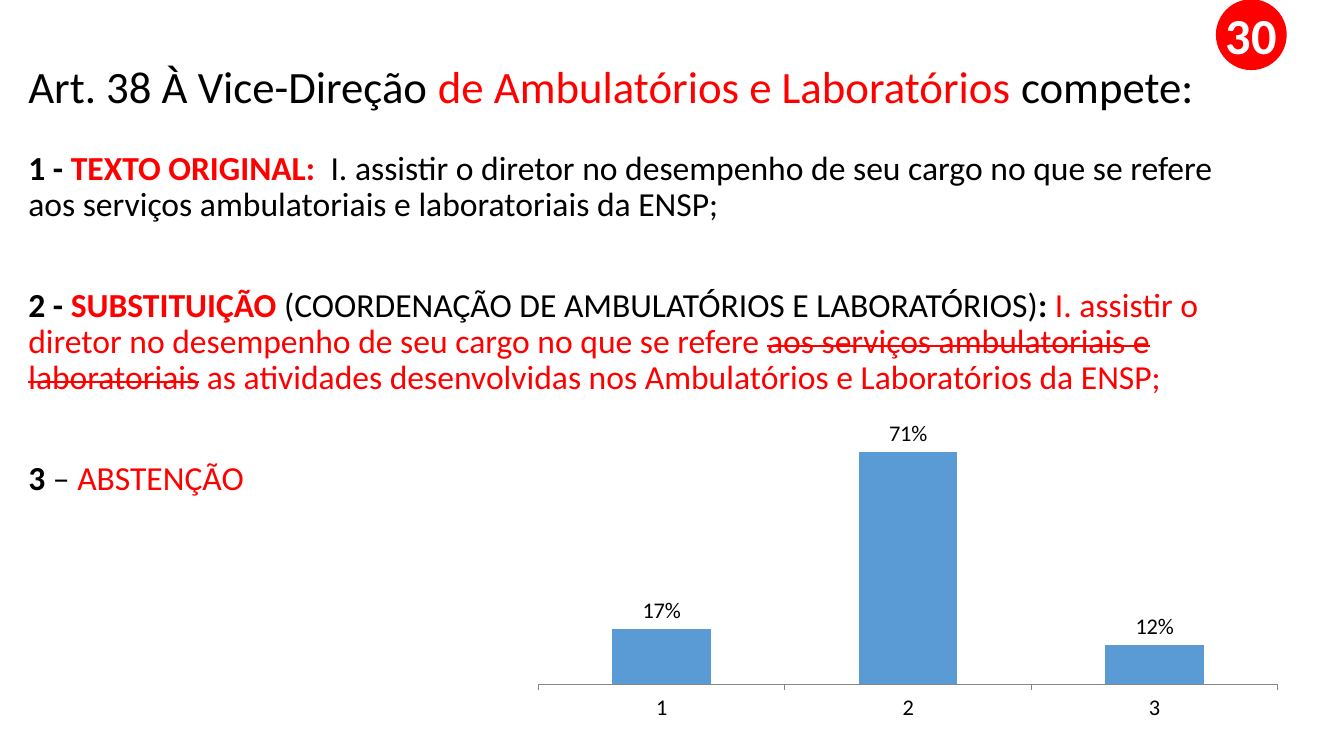
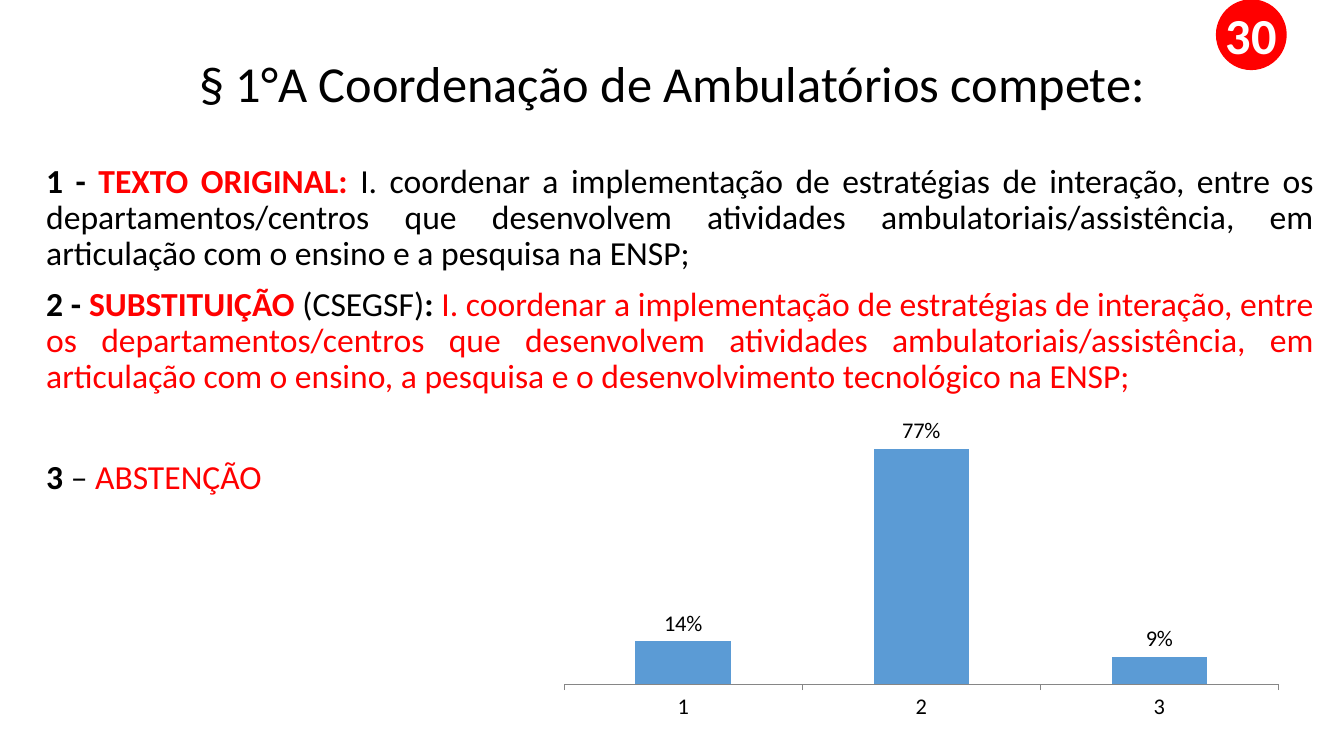
from dataclasses import dataclass

import lxml.etree
import pptx
import pptx.chart.data
import pptx.dml.color
import pptx.enum.chart
import pptx.enum.shapes
import pptx.enum.text
import pptx.oxml.ns
import pptx.util

Cm = pptx.util.Cm
Pt = pptx.util.Pt
ALIGN = pptx.enum.text.PP_ALIGN
ANCHOR = pptx.enum.text.MSO_ANCHOR


@dataclass(frozen=True)
class Theme:
    font: str = "Calibri"
    text: str = "000000"
    accent: str = "FF0000"
    on_accent: str = "FFFFFF"
    bars: str = "5B9BD5"
    axis: str = "868686"
    badge_size: int = 36
    body_size: int = 24
    chart_size: int = 16
    line_spacing: float = 0.9
    gap: int = 10
    wide_gap: int = 46


THEME = Theme()


def rgb(color):
    return pptx.dml.color.RGBColor.from_string(color)


def style_font(font, size, color, bold=False):
    font.name = THEME.font
    font.size = Pt(size)
    font.bold = bold
    font.color.rgb = rgb(color)


def add_text(paragraph, text, size=THEME.body_size, color=THEME.text,
             bold=False, strike=False):
    run = paragraph.add_run()
    run.text = text
    style_font(run.font, size, color, bold)
    if strike:
        run._r.get_or_add_rPr().set("strike", "sngStrike")


def place(placeholder, box, anchor):
    """Move a placeholder to box (left, top, width, height in cm)."""
    placeholder.left, placeholder.top, placeholder.width, placeholder.height = map(Cm, box)
    frame = placeholder.text_frame
    frame.word_wrap = True
    frame.auto_size = pptx.enum.text.MSO_AUTO_SIZE.NONE
    frame.vertical_anchor = anchor
    return frame


def fill_title(slide, box, parts, size, align):
    paragraph = place(slide.shapes.title, box, ANCHOR.MIDDLE).paragraphs[0]
    paragraph.alignment = align
    paragraph.line_spacing = THEME.line_spacing
    for text, color in parts:
        add_text(paragraph, text, size=size, color=color)


def fill_options(slide, box, options, align):
    """Write the voting options; each is (space before, [(text, format), ...])."""
    frame = place(slide.placeholders[1], box, ANCHOR.TOP)
    for index, (space, parts) in enumerate(options):
        paragraph = frame.add_paragraph() if index else frame.paragraphs[0]
        properties = paragraph._p.get_or_add_pPr()
        properties.set("marL", "0")
        properties.set("indent", "0")
        lxml.etree.SubElement(properties, pptx.oxml.ns.qn("a:buNone"))
        paragraph.alignment = align
        paragraph.line_spacing = THEME.line_spacing
        paragraph.space_before = Pt(space)
        for text, text_format in parts:
            add_text(paragraph, text, **text_format)


def add_votes_chart(slide, box, votes, maximum):
    data = pptx.chart.data.CategoryChartData(number_format="0%")
    data.categories = [str(number + 1) for number in range(len(votes))]
    data.add_series("Series 1", votes)
    kind = pptx.enum.chart.XL_CHART_TYPE.COLUMN_CLUSTERED
    chart = slide.shapes.add_chart(kind, *map(Cm, box), data).chart
    chart.has_title = False
    chart.has_legend = False
    style_font(chart.font, THEME.chart_size, THEME.text)

    shares = chart.value_axis
    shares.minimum_scale = 0
    shares.maximum_scale = maximum
    shares.has_major_gridlines = False
    shares.visible = False
    options = chart.category_axis
    options.major_tick_mark = pptx.enum.chart.XL_TICK_MARK.OUTSIDE
    options.format.line.color.rgb = rgb(THEME.axis)

    plot = chart.plots[0]
    plot.gap_width = 150
    plot.vary_by_categories = False
    fill = plot.series[0].format.fill
    fill.solid()
    fill.fore_color.rgb = rgb(THEME.bars)
    plot.has_data_labels = True
    labels = plot.data_labels
    labels.show_value = True
    labels.number_format = "0%"
    labels.number_format_is_linked = False
    labels.position = pptx.enum.chart.XL_LABEL_POSITION.OUTSIDE_END
    style_font(labels.font, THEME.chart_size, THEME.text)


def add_badge(slide, text):
    diameter = Cm(1.75)
    badge = slide.shapes.add_shape(pptx.enum.shapes.MSO_SHAPE.OVAL,
                                   Cm(30.66), 0, diameter, diameter)
    badge.shadow.inherit = False
    badge.fill.solid()
    badge.fill.fore_color.rgb = rgb(THEME.accent)
    badge.line.color.rgb = rgb(THEME.accent)
    badge.line.width = Pt(1)
    frame = badge.text_frame
    frame.margin_left = frame.margin_right = frame.margin_top = frame.margin_bottom = 0
    frame.word_wrap = False
    frame.vertical_anchor = ANCHOR.MIDDLE
    frame.paragraphs[0].alignment = ALIGN.CENTER
    add_text(frame.paragraphs[0], text, size=THEME.badge_size,
             color=THEME.on_accent, bold=True)


def add_vote_slide(deck, title, options, chart):
    slide = deck.slides.add_slide(deck.slide_layouts[1])
    fill_title(slide, **title)
    fill_options(slide, **options)
    add_votes_chart(slide, **chart)
    add_badge(slide, "30")


def main():
    deck = pptx.Presentation()
    deck.slide_width, deck.slide_height = Cm(33.87), Cm(19.05)

    plain = {}
    strong = {"bold": True}
    red = {"color": THEME.accent}
    heading = {**strong, **red}
    original = [("1 - ", strong), ("TEXTO ORIGINAL: ", heading)]
    replacement = [("2 - ", strong), ("SUBSTITUIÇÃO ", heading)]
    abstention = (THEME.wide_gap, [("3", strong), (" – ", plain), ("ABSTENÇÃO", red)])

    add_vote_slide(
        deck,
        title={
            "box": (0.46, 1.02, 31.06, 2.44), "size": 32, "align": ALIGN.LEFT,
            "parts": [("Art. 38 À Vice-Direção ", THEME.text),
                      ("de Ambulatórios e Laboratórios ", THEME.accent),
                      ("compete:", THEME.text)],
        },
        options={
            "box": (0.46, 3.68, 31.06, 13.49), "align": ALIGN.LEFT,
            "options": [
                (0, original + [
                    (" I. assistir o diretor no desempenho de seu cargo no que se refere "
                     "aos serviços ambulatoriais e laboratoriais da ENSP;", plain)]),
                (THEME.wide_gap, replacement + [
                    ("(COORDENAÇÃO DE AMBULATÓRIOS E LABORATÓRIOS)", plain),
                    (": ", strong),
                    ("I. assistir o diretor no desempenho de seu cargo no que se refere ", red),
                    ("aos serviços ambulatoriais e laboratoriais", {**red, "strike": True}),
                    (" as atividades desenvolvidas nos Ambulatórios e Laboratórios "
                     "da ENSP;", red)]),
                abstention,
            ],
        },
        chart={"box": (13.18, 10.49, 19.41, 7.85), "votes": (0.17, 0.71, 0.12),
               "maximum": 0.8},
    )
    add_vote_slide(
        deck,
        title={
            "box": (2.34, 1.02, 29.21, 2.29), "size": 36, "align": ALIGN.CENTER,
            "parts": [("§ 1°A Coordenação de Ambulatórios compete:", THEME.text)],
        },
        options={
            "box": (0.91, 4.01, 32.46, 13.92), "align": ALIGN.JUSTIFY,
            "options": [
                (0, original + [
                    ("I. coordenar a implementação de estratégias de interação, entre os "
                     "departamentos/centros que desenvolvem atividades "
                     "ambulatoriais/assistência, em articulação com o ensino e a pesquisa "
                     "na ENSP;", plain)]),
                (THEME.gap, replacement + [
                    ("(CSEGSF)", plain),
                    (": ", strong),
                    ("I. coordenar a implementação de estratégias de interação, entre os "
                     "departamentos/centros que desenvolvem atividades "
                     "ambulatoriais/assistência, em articulação com o ensino, a pesquisa "
                     "e o desenvolvimento tecnológico na ENSP;", red)]),
                abstention,
            ],
        },
        chart={"box": (13.84, 10.16, 18.75, 8.18), "votes": (0.14, 0.77, 0.09),
               "maximum": 0.9},
    )
    deck.save("out.pptx")


if __name__ == "__main__":
    main()
